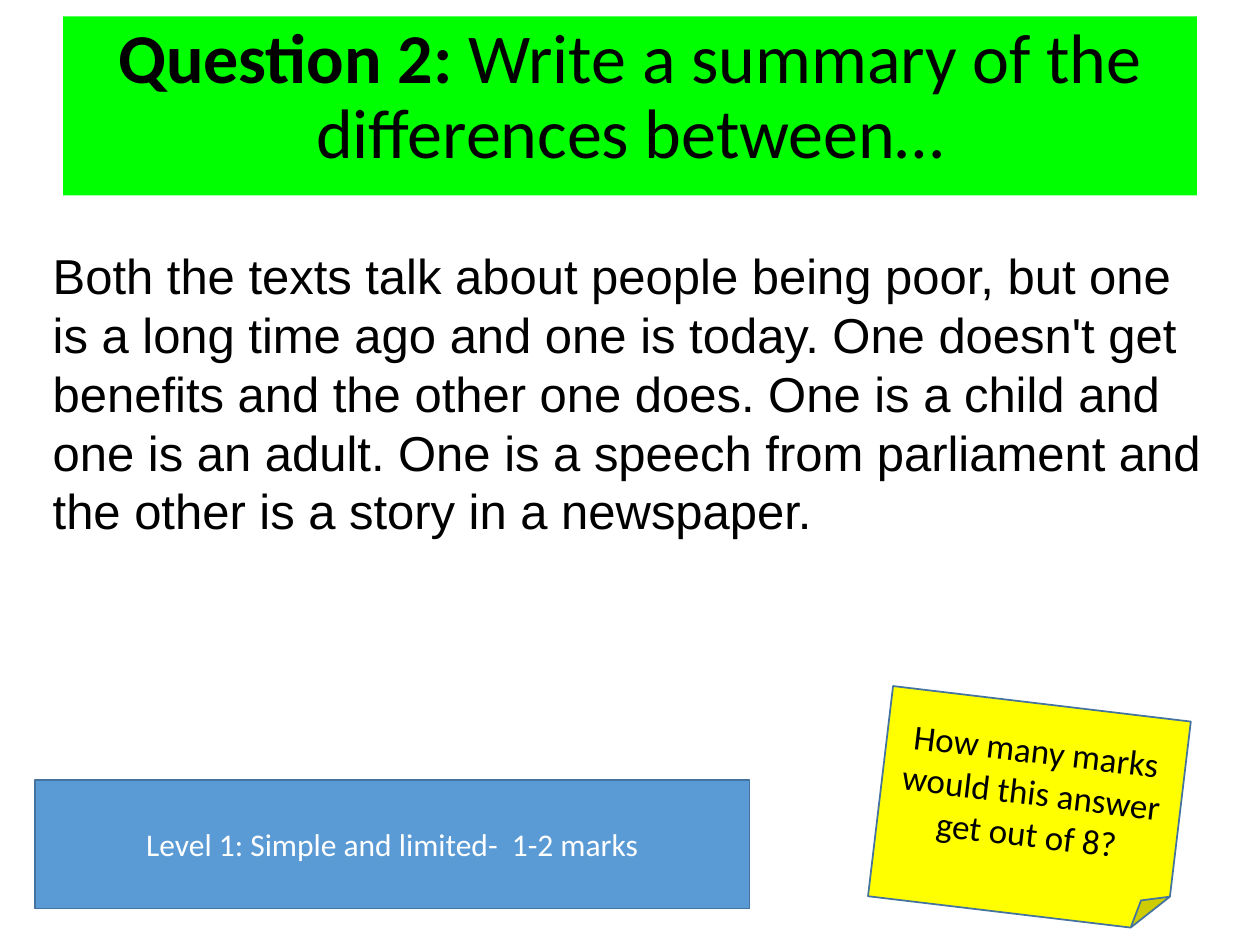
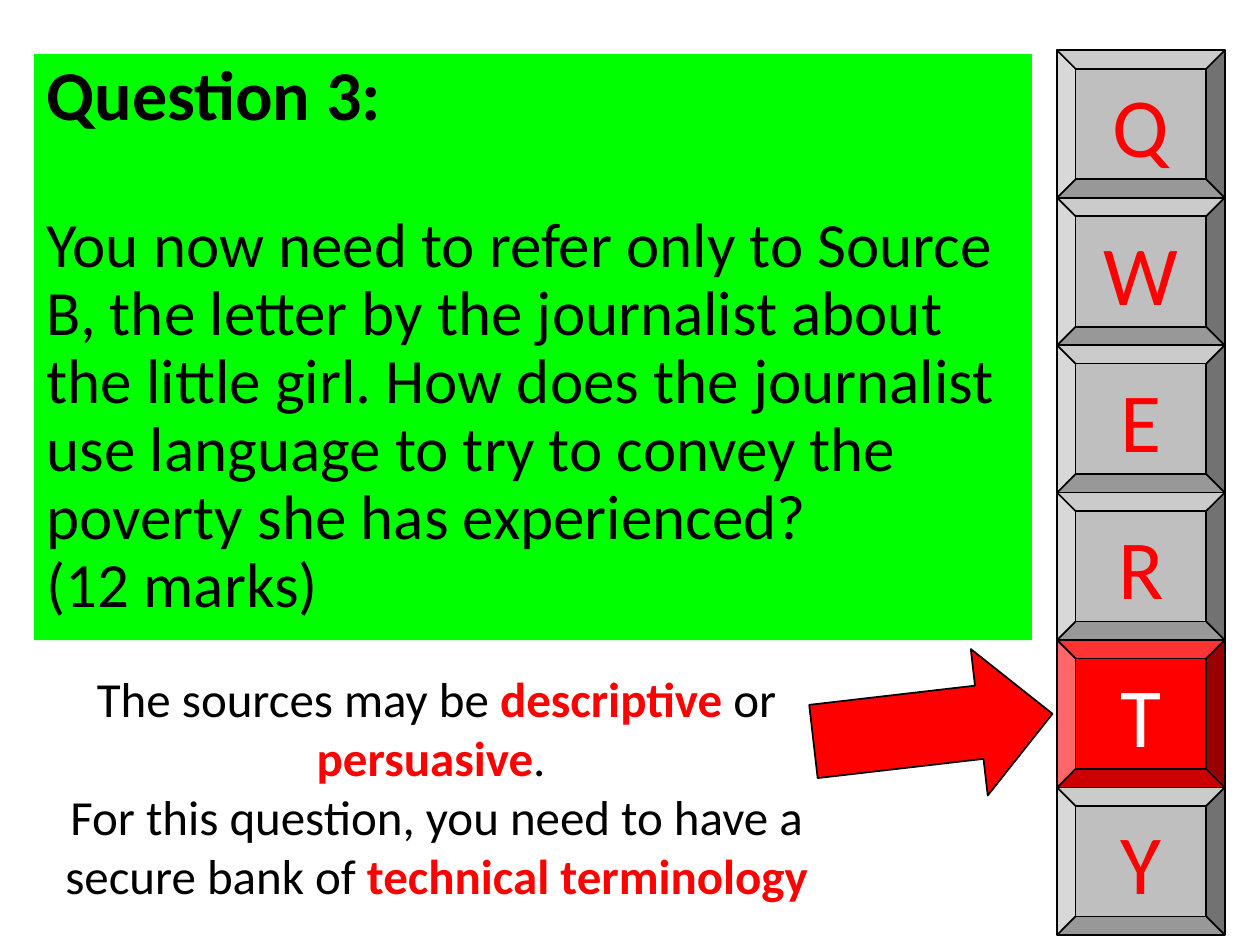
from pptx import Presentation
from pptx.dml.color import RGBColor
from pptx.enum.shapes import MSO_SHAPE as SHAPE
from pptx.enum.text import MSO_ANCHOR as ANCHOR, MSO_AUTO_SIZE as AUTO, PP_ALIGN as ALIGN
from pptx.util import Pt

PX = 9144  # EMU in one px, 100 px to the inch
TITLE_ONLY = 5
COLORS = {
    "band": "00FF00", "text": "000000", "accent": "FF0000", "light": "FFFFFF",
    "note": "FFFF00", "level": "5B9BD5", "edge": "43739E", "key": "BFBFBF",
}


def rgb(name):
    return RGBColor.from_string(COLORS[name])


def emu(box):
    return [v * PX for v in box]


def write(shape, paragraphs, size, color="text", font="Calibri", anchor=ANCHOR.TOP, **fmt):
    """Fill a shape with paragraphs, each a list of (text, run format) pairs."""
    tf = shape.text_frame
    for name, value in {"word_wrap": True, "auto_size": AUTO.NONE,
                        "vertical_anchor": anchor}.items():
        setattr(tf, name, value)
    for i, runs in enumerate(paragraphs):
        p = tf.paragraphs[0] if i == 0 else tf.add_paragraph()
        for name, value in fmt.items():
            setattr(p, name, value)
        for text, own in runs:
            r = p.add_run()
            r.text = text
            look = {"size": size, "color": color, "bold": False, **own}
            r.font.color.rgb = rgb(look.pop("color"))
            look["size"] = Pt(look["size"])
            for name, value in {"name": font, **look}.items():
                setattr(r.font, name, value)
    return tf


def add_title(s, box, paragraphs, size, align):
    title = s.shapes.title
    title.left, title.top, title.width, title.height = emu(box)
    title.fill.solid()
    title.fill.fore_color.rgb = rgb("band")
    return write(title, paragraphs, size, alignment=align, line_spacing=0.9)


def add_text(s, box, paragraphs, **fmt):
    return write(s.shapes.add_textbox(*emu(box)), paragraphs, 28, **fmt)


def add_box(s, kind, box, fill, edge="text", rotation=0):
    sp = s.shapes.add_shape(kind, *emu(box))
    sp.shadow.inherit = False
    sp.rotation = rotation
    sp.fill.solid()
    sp.fill.fore_color.rgb = rgb(fill)
    sp.line.color.rgb = rgb(edge)
    sp.line.width = Pt(1)
    return sp


def add_label(s, kind, box, fill, text, size, color, **look):
    sp = add_box(s, kind, box, fill, **look)
    write(sp, [[(text, {})]], size, color, anchor=ANCHOR.MIDDLE, alignment=ALIGN.CENTER)


def add_keys(s, box, letters, active):
    """Stack equal keys down the box, with the active one lit."""
    x, y, w, h = box
    step = h // len(letters)
    for i, letter in enumerate(letters):
        fill, color = ("accent", "light") if letter == active else ("key", "accent")
        add_label(s, SHAPE.BEVEL, (x, y + i * step, w, step), fill, letter, 48, color)


def summary_slide(prs):
    s = prs.slides.add_slide(prs.slide_layouts[TITLE_ONLY])
    add_title(s, (50, 13, 900, 142), [[
        ("Question 2: ", {"bold": True}),
        ("Write a summary of the differences between…", {}),
    ]], 40, ALIGN.CENTER)
    # Sample answer
    add_text(s, (32, 190, 936, 246), [[(
        "Both the texts talk about people being poor, but one is a long time ago and one "
        "is today. One doesn't get benefits and the other one does. One is a child and one "
        "is an adult. One is a speech from parliament and the other is a story in a "
        "newspaper.", {})]], font="Arial")
    # Marking prompt and level
    add_label(s, SHAPE.FOLDED_CORNER, (698, 558, 238, 168), "note",
              "How many marks would this answer get out of 8?", 20, "text",
              edge="edge", rotation=6.8)
    add_label(s, SHAPE.RECTANGLE, (28, 619, 567, 102), "level",
              "Level 1: Simple and limited-  1-2 marks", 18, "light", edge="edge")


def language_slide(prs):
    s = prs.slides.add_slide(prs.slide_layouts[TITLE_ONLY])
    tf = add_title(s, (27, 43, 792, 465), [
        [("Question 3:", {"size": 40, "bold": True})],
        [("You now need to refer only to Source B, the letter by the journalist about the "
          "little girl. How does the journalist use language to try to convey the poverty "
          "she has experienced?", {})],
        [("(12 marks)", {})],
    ], 36, ALIGN.LEFT)
    tf.paragraphs[1].space_before = Pt(44)
    # Key column
    add_keys(s, (839, 40, 133, 702), "QWERTY", "T")
    # Terminology hint and its arrow
    key_term = {"color": "accent", "bold": True}
    add_text(s, (17, 526, 659, 199), [
        [("The sources may be ", {}), ("descriptive ", key_term), ("or ", {}),
         ("persuasive", key_term), (". ", {})],
        [("For this question, you need to have a secure bank of ", {}),
         ("technical terminology", key_term)],
    ], alignment=ALIGN.CENTER)
    add_box(s, SHAPE.RIGHT_ARROW, (645, 519, 191, 117), "accent", rotation=353.4)


def main():
    prs = Presentation()
    prs.slide_width, prs.slide_height = emu((1000, 750))
    summary_slide(prs)
    language_slide(prs)
    prs.save("out.pptx")


if __name__ == "__main__":
    main()
